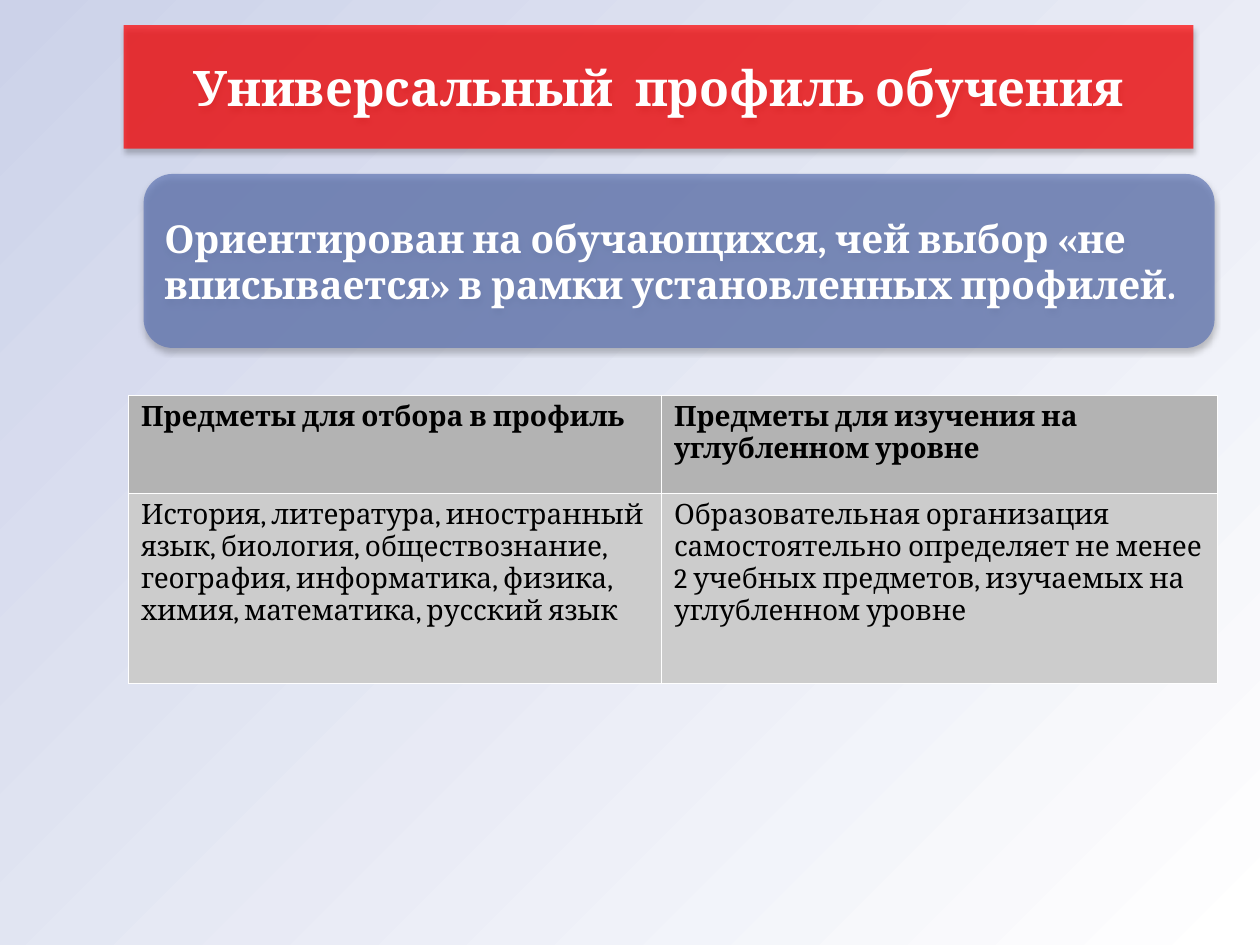
from lxml.etree import SubElement
from pptx import Presentation
from pptx.dml.color import RGBColor
from pptx.enum.shapes import MSO_SHAPE
from pptx.enum.text import MSO_ANCHOR, MSO_AUTO_SIZE, PP_ALIGN
from pptx.oxml import parse_xml
from pptx.oxml.ns import nsdecls, qn
from pptx.util import Pt

WHITE = RGBColor(0xFF, 0xFF, 0xFF)
BLACK = RGBColor(0, 0, 0)
RED = RGBColor(0xFF, 0, 0)
BLUE = RGBColor(0x60, 0x76, 0xB4)
PALE = RGBColor(0xCC, 0xD2, 0xE9)
HEAD = RGBColor(0xB3, 0xB3, 0xB3)
BODY = RGBColor(0xCC, 0xCC, 0xCC)

ROWS = [
    ["Предметы для отбора в профиль",
     "Предметы для изучения на углубленном уровне"],
    ["История, литература, иностранный язык, биология, обществознание, "
     "география, информатика, физика, химия, математика, русский язык",
     "Образовательная организация самостоятельно определяет не менее "
     "2 учебных предметов, изучаемых на углубленном уровне"],
]


def write(frame, text, size=16, color=BLACK, bold=False, align=PP_ALIGN.LEFT,
          font="Cambria"):
    para = frame.paragraphs[0]
    para.alignment = align
    run = para.add_run()
    run.text = text
    run.font.name = font
    run.font.size = Pt(size)
    run.font.bold = bold
    run.font.color.rgb = color


class Deck:
    def __init__(self, wide, high):
        self.prs = Presentation()
        self.prs.slide_width, self.prs.slide_height = Pt(wide), Pt(high)
        self.slide = self.prs.slides.add_slide(self.prs.slide_layouts[5])
        self.alpha = 71
        self.rule = 0.06

    def back(self, start, end):
        fill = self.slide.background.fill
        fill.gradient()
        fill.gradient_angle = 315
        for stop, color in zip(fill.gradient_stops, (start, end)):
            stop.color.rgb = color

    def panel(self, shape, text, color, **style):
        """Give a shape a see-through fill, a soft shadow and white text."""
        shape.fill.solid()
        shape.fill.fore_color.rgb = color
        shape.line.fill.background()
        props = shape.element.spPr
        tint = props.find(qn("a:solidFill"))[0]
        SubElement(tint, qn("a:alpha"), val=str(self.alpha * 1000))
        shape.shadow.inherit = False
        props.find(qn("a:effectLst")).append(parse_xml(
            f'<a:outerShdw {nsdecls("a")} blurRad="{Pt(3.5)}" '
            f'dist="{Pt(2.2)}" dir="5400000" rotWithShape="0">'
            '<a:srgbClr val="000000"><a:alpha val="32000"/></a:srgbClr>'
            '</a:outerShdw>'))
        frame = shape.text_frame
        frame.word_wrap = True
        frame.auto_size = MSO_AUTO_SIZE.NONE
        frame.vertical_anchor = MSO_ANCHOR.MIDDLE
        write(frame, text, color=WHITE, bold=True, **style)

    def title(self, text, box, color):
        shape = self.slide.shapes.title
        shape.left, shape.top, shape.width, shape.height = map(Pt, box)
        shape.element.spPr.append(parse_xml(
            f'<a:prstGeom {nsdecls("a")} prst="roundRect"><a:avLst/>'
            '</a:prstGeom>'))
        self.panel(shape, text, color, size=28, align=PP_ALIGN.CENTER)

    def card(self, text, box, color):
        shape = self.slide.shapes.add_shape(
            MSO_SHAPE.ROUNDED_RECTANGLE, *map(Pt, box))
        self.panel(shape, text, color, size=22)

    def edge(self, cell):
        props = cell._tc.get_or_add_tcPr()
        for spot, side in enumerate(("lnL", "lnR", "lnT", "lnB")):
            props.insert(spot, parse_xml(
                f'<a:{side} {nsdecls("a")} w="{Pt(self.rule)}"><a:solidFill>'
                f'<a:srgbClr val="{WHITE}"/></a:solidFill></a:{side}>'))

    def table(self, rows, left, top, wides, highs):
        grid = self.slide.shapes.add_table(
            len(rows), len(wides), Pt(left), Pt(top),
            Pt(sum(wides)), Pt(sum(highs))).table
        grid.first_row = grid.horz_banding = False
        for col, wide in zip(grid.columns, wides):
            col.width = Pt(wide)
        for r, (texts, high) in enumerate(zip(rows, highs)):
            grid.rows[r].height = Pt(high)
            for c, text in enumerate(texts):
                cell = grid.cell(r, c)
                cell.fill.solid()
                cell.fill.fore_color.rgb = BODY if r else HEAD
                self.edge(cell)
                write(cell.text_frame, text, bold=r == 0)


def main():
    deck = Deck(720, 540)
    deck.back(PALE, WHITE)
    deck.title("Универсальный  профиль обучения", (70.6, 14.4, 611.3, 70.6), RED)
    deck.table(ROWS, 73.4, 225.5, (304.6, 317.5), (56.2, 108.7))
    deck.card("Ориентирован на обучающихся, чей выбор «не вписывается» "
              "в рамки установленных профилей.", (82.1, 99.4, 612, 99.4), BLUE)
    deck.prs.save("out.pptx")


if __name__ == "__main__":
    main()
